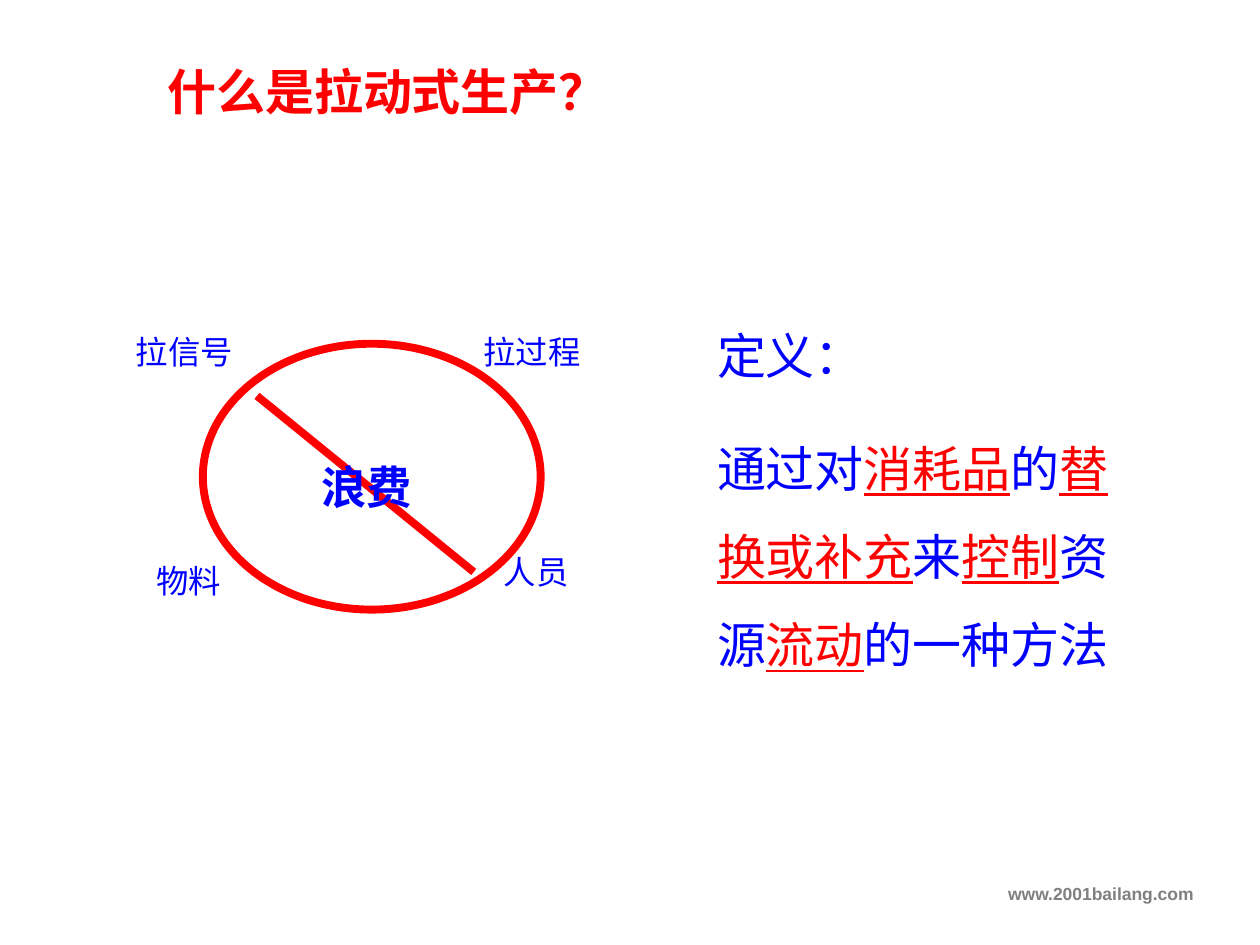
import pptx
import pptx.util
import pptx.dml.color
import pptx.enum.shapes
import pptx.enum.text
import lxml.etree

Cm = pptx.util.Cm
Pt = pptx.util.Pt
ALIGN = pptx.enum.text.PP_ALIGN
ANCHOR = pptx.enum.text.MSO_ANCHOR

THEME = {
    "blue": "0000FF", "red": "FF0000", "white": "FFFFFF", "gray": "808080",
    "latin": "Arial", "cjk": "Noto Sans CJK SC",
    "heading": 28, "center": 25.9, "label": 18.5, "footer": 10, "line": 4.5,
}

TITLE = "什么是拉动式生产？"
DEFINITION = [
    [("定义：", False)],
    [("通过对", False), ("消耗品", True), ("的", False), ("替换或补充", True),
     ("来", False), ("控制", True), ("资源", False), ("流动", True),
     ("的一种方法", False)],
]
LABELS = [
    ("拉信号", 2.49, 6.58),
    ("拉过程", 9.5, 6.58),
    ("人员", 9.91, 11),
    ("物料", 2.9, 11.18),
]
WASTE = "浪费"
FOOTER = "www.2001bailang.com"


def color(name):
    return pptx.dml.color.RGBColor.from_string(THEME[name])


def style(r, size, tint, face="latin", bold=False, underline=False):
    r.font.size = Pt(THEME[size])
    r.font.name = THEME[face]
    r.font.bold = bold
    r.font.underline = underline
    r.font.color.rgb = color(tint)
    ea = lxml.etree.SubElement(r.font._element, pptx.oxml.ns.qn("a:ea"))
    ea.set("typeface", THEME["cjk"])


def place(sp, left, top, width, height):
    sp.left, sp.top, sp.width, sp.height = Cm(left), Cm(top), Cm(width), Cm(height)
    tf = sp.text_frame
    tf.word_wrap = True
    tf.auto_size = pptx.enum.text.MSO_AUTO_SIZE.NONE
    tf.vertical_anchor = ANCHOR.TOP
    return tf


def add_text(s, text, box, size, tint, align=ALIGN.LEFT, bold=False):
    tf = place(s.shapes.add_textbox(0, 0, 0, 0), *box)
    tf.text = text
    p = tf.paragraphs[0]
    p.alignment = align
    style(p.runs[0], size, tint, bold=bold)


def set_line(sp):
    sp.line.color.rgb = color("red")
    sp.line.width = Pt(THEME["line"])


def add_title(s):
    tf = place(s.shapes.title, 3.12, 1.12, 10.2, 1.45)
    tf.text = TITLE
    p = tf.paragraphs[0]
    p.alignment = ALIGN.LEFT
    style(p.runs[0], "heading", "red", "cjk", bold=True)


def add_definition(s):
    tf = place(s.placeholders[1], 14.2, 5.84, 8.99, 7.82)
    for i, parts in enumerate(DEFINITION):
        p = tf.add_paragraph() if i else tf.paragraphs[0]
        pPr = p._p.get_or_add_pPr()
        pPr.set("marL", "0")
        pPr.set("indent", "0")
        lxml.etree.SubElement(pPr, pptx.oxml.ns.qn("a:buNone"))
        p.line_spacing = 1.5
        p.space_before = Pt(THEME["heading"] / 2 if i else 0)
        for text, key in parts:
            r = p.add_run()
            r.text = text
            style(r, "heading", "red" if key else "blue", "cjk", underline=key)


def add_waste_sign(s):
    sp = s.shapes.add_shape(pptx.enum.shapes.MSO_SHAPE.OVAL,
                            Cm(4.09), Cm(6.93), Cm(6.81), Cm(5.36))
    sp.shadow.inherit = False
    sp.fill.solid()
    sp.fill.fore_color.rgb = color("white")
    set_line(sp)
    bar = s.shapes.add_connector(pptx.enum.shapes.MSO_CONNECTOR.STRAIGHT,
                                 Cm(5.18), Cm(7.98), Cm(9.55), Cm(11.53))
    set_line(bar)
    lxml.etree.SubElement(bar._element.spPr, pptx.oxml.ns.qn("a:effectLst"))
    add_text(s, WASTE, (5.49, 9.14, 3.81, 1.37), "center", "blue",
             ALIGN.CENTER, bold=True)
    for text, left, top in LABELS:
        add_text(s, text, (left, top, 3.2, 1.04), "label", "blue")


def main():
    prs = pptx.Presentation()
    prs.slide_width, prs.slide_height = Cm(25.4), Cm(19.05)
    s = prs.slides.add_slide(prs.slide_layouts[1])
    add_text(s, FOOTER, (0, 17.68, 24.31, 0.89), "footer", "gray",
             ALIGN.RIGHT, bold=True)
    add_waste_sign(s)
    add_definition(s)
    add_title(s)
    prs.save("out.pptx")


if __name__ == "__main__":
    main()
